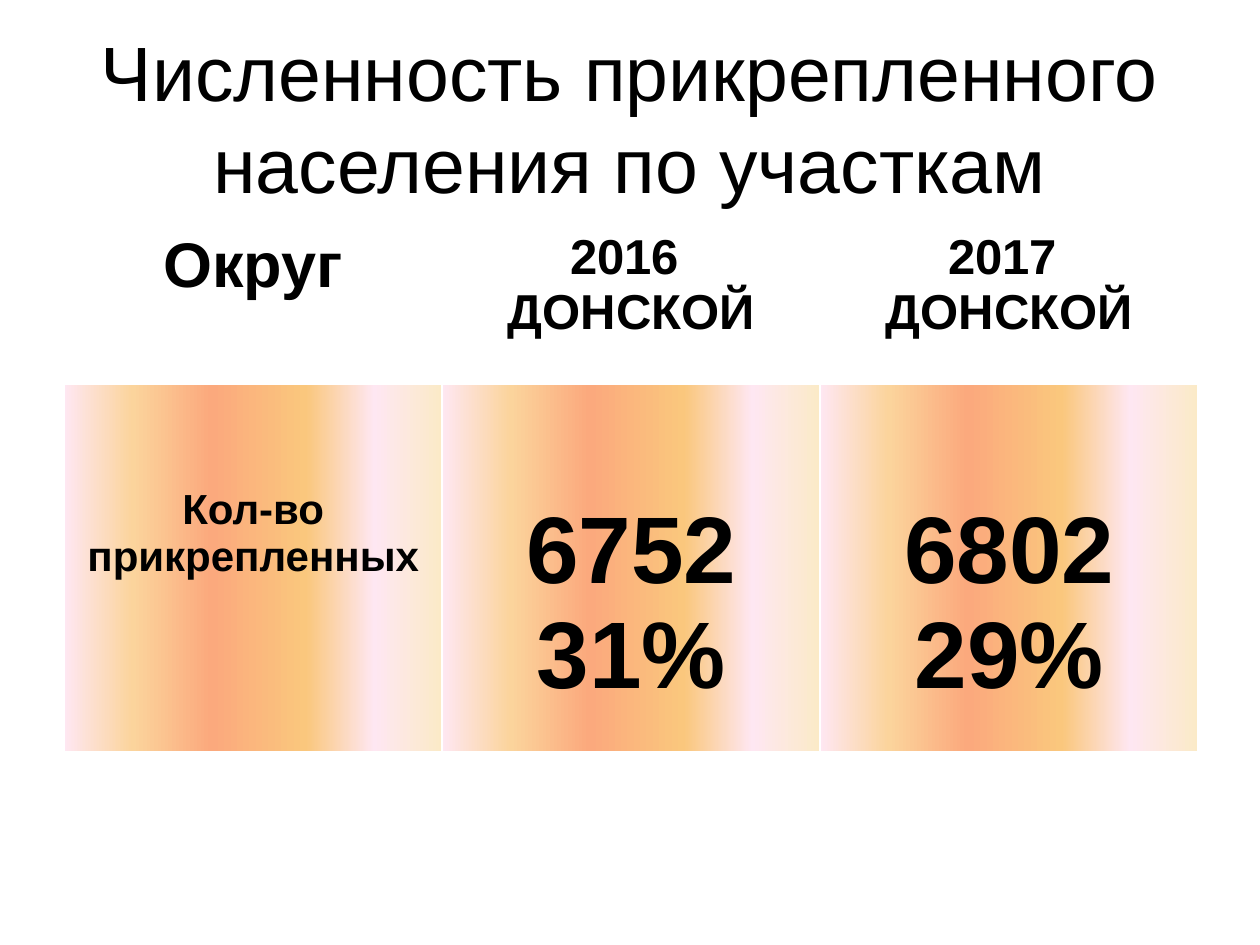
from typing import NamedTuple

from lxml.etree import SubElement as Sub
from pptx import Presentation
from pptx.dml.color import RGBColor
from pptx.enum.text import MSO_ANCHOR as Anchor, PP_ALIGN as Align
from pptx.oxml.ns import qn
from pptx.util import Inches, Pt

BLACK = RGBColor(0, 0, 0)
WHITE = RGBColor(255, 255, 255)
CREAM = RGBColor(0xFB, 0xEA, 0xC7)
PINK = RGBColor(0xFE, 0xE7, 0xF2)
AMBER = RGBColor(0xFA, 0xC7, 0x7D)
CORAL = RGBColor(0xFB, 0xA9, 0x7D)
SAND = RGBColor(0xFB, 0xD4, 0x9C)
STOPS = ((0, CREAM), (18, PINK), (36, AMBER), (61, CORAL), (82, SAND), (100, PINK))
WIDE, HIGH = Inches(10), Inches(7.5)
ROWS = (1.26, 2.93)
COLS = 3


class Entry(NamedTuple):
    lines: tuple[str, ...]
    size: int
    top: float = 0.05


GRID = (
    (
        Entry(("Округ",), 36),
        Entry(("2016 ", "ДОНСКОЙ"), 28),
        Entry(("2017 ", "ДОНСКОЙ"), 28),
    ),
    (
        Entry(("Кол-во", "прикрепленных"), 24, 0.82),
        Entry(("6752", "31%"), 54, 0.91),
        Entry(("6802", "29%"), 54, 0.91),
    ),
)


def write(frame, lines, *, size: int, bold: bool = False) -> None:
    frame.word_wrap = True
    for i, line in enumerate(lines):
        para = frame.paragraphs[0] if i == 0 else frame.add_paragraph()
        para.alignment = Align.CENTER
        run = para.add_run()
        run.text = line
        font = run.font
        font.name, font.size, font.bold = "Arial", Pt(size), bold
        font.color.rgb = BLACK


def add_color(node, color: RGBColor) -> None:
    Sub(node, qn("a:srgbClr"), val=str(color))


def edge(cell, side: str, width: int) -> None:
    line = Sub(cell._tc.get_or_add_tcPr(), qn(f"a:ln{side}"), w=str(Pt(width)))
    add_color(Sub(line, qn("a:solidFill")), WHITE)


def blend(cell) -> None:
    grad = Sub(cell._tc.get_or_add_tcPr(), qn("a:gradFill"), rotWithShape="1")
    stops = Sub(grad, qn("a:gsLst"))
    for share, color in STOPS:
        add_color(Sub(stops, qn("a:gs"), pos=str(share * 1000)), color)
    Sub(grad, qn("a:lin"), ang=str(180 * 60000), scaled="0")


def draw_cell(cell, entry: Entry, head: bool) -> None:
    write(cell.text_frame, entry.lines, size=entry.size, bold=True)
    cell.margin_top = Inches(entry.top)
    for side in "LRTB":
        thick = (head and side == "B") or (not head and side == "T")
        edge(cell, side, 3 if thick else 1)
    if head:
        cell.fill.background()
    else:
        blend(cell)


def draw_table(slide) -> None:
    frame = slide.shapes.add_table(
        len(ROWS), COLS, Inches(0.51), Inches(1.78), int(WIDE * 0.9), Inches(sum(ROWS))
    )
    table = frame.table
    table.horz_banding = False
    for r, (high, row) in enumerate(zip(ROWS, GRID)):
        table.rows[r].height = Inches(high)
        for c, entry in enumerate(row):
            draw_cell(table.cell(r, c), entry, r == 0)


def draw_title(slide) -> None:
    box = slide.shapes.add_textbox(
        int(WIDE * 0.05), int(HIGH * 0.04), int(WIDE * 0.9), Inches(1.25)
    )
    box.text_frame.vertical_anchor = Anchor.MIDDLE
    write(box.text_frame, ("Численность прикрепленного населения по участкам",), size=44)


def main() -> None:
    deck = Presentation()
    deck.slide_width, deck.slide_height = WIDE, HIGH
    slide = deck.slides.add_slide(deck.slide_layouts[6])
    draw_title(slide)
    draw_table(slide)
    deck.save("out.pptx")


if __name__ == "__main__":
    main()
